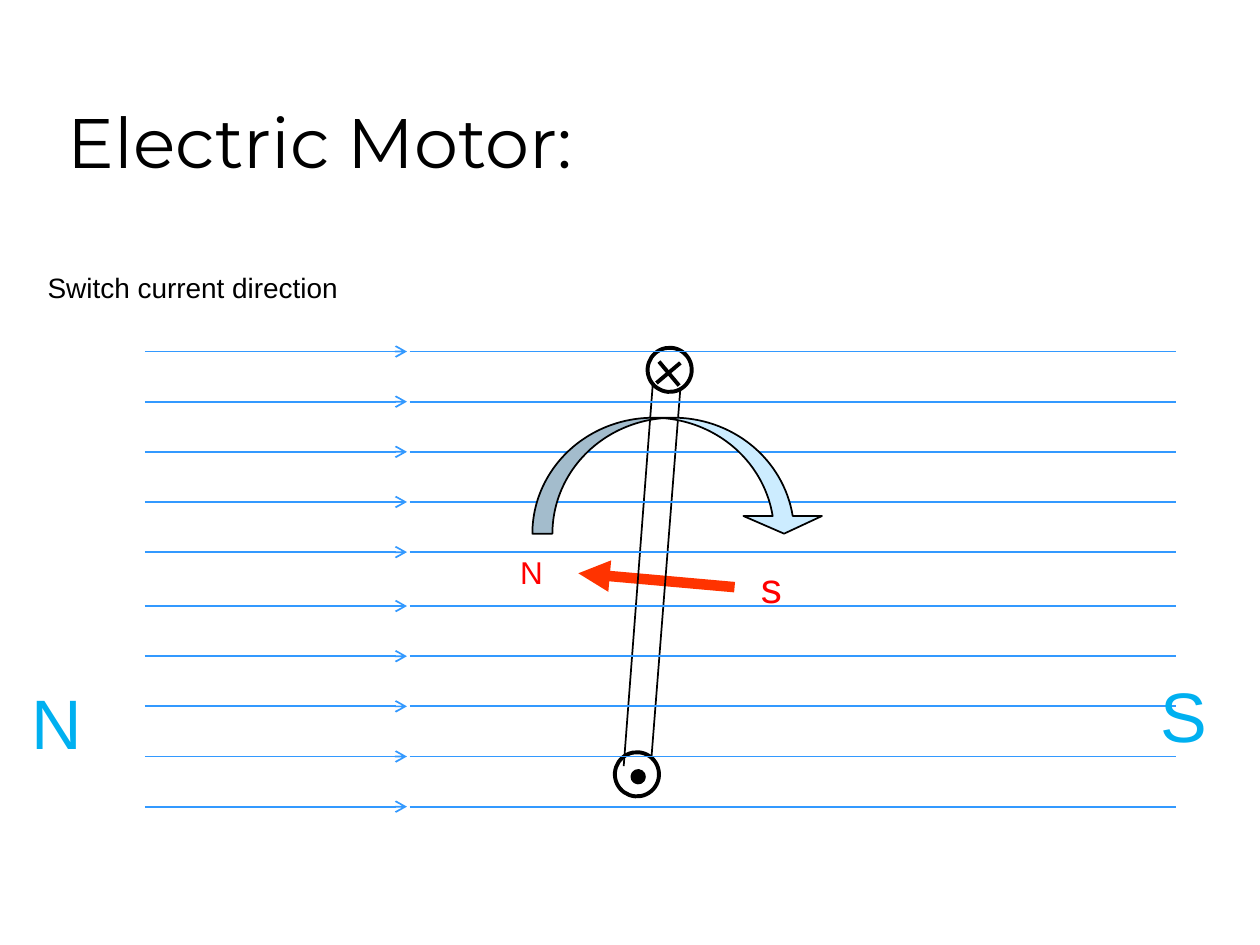
from pptx import Presentation
from pptx.dml.color import RGBColor
from pptx.enum.shapes import MSO_CONNECTOR, MSO_SHAPE
from pptx.enum.text import MSO_ANCHOR
from pptx.oxml.ns import qn
from pptx.util import Inches, Pt
from lxml import etree

LINE = MSO_CONNECTOR.STRAIGHT
CIRCLE = MSO_SHAPE.OVAL
CURVED_ARROW = MSO_SHAPE.CURVED_RIGHT_ARROW
TOP, BOTTOM = MSO_ANCHOR.TOP, MSO_ANCHOR.BOTTOM

COLS, ROWS = 100, 75
BLACK, WHITE = "000000", "FFFFFF"
FIELD, POLE, MAGNET = "3399FF", "00B0F0", "FF0000"
TILT = 184.5


def rgb(code):
    return RGBColor.from_string(code)


class Sketch:
    """Draws on one slide; lengths are columns and rows of a 100 by 75 grid."""

    def __init__(self, prs):
        self.slide = prs.slides.add_slide(prs.slide_layouts[6])
        self.shapes = self.slide.shapes
        self.col = prs.slide_width / COLS
        self.row = prs.slide_height / ROWS

    def place(self, x, y, w, h):
        return (round(x * self.col), round(y * self.row),
                round(w * self.col), round(h * self.row))

    def text(self, text, x, y, w, h, size, color=BLACK, font="Arial", anchor=TOP):
        tf = self.shapes.add_textbox(*self.place(x, y, w, h)).text_frame
        tf.word_wrap = True
        tf.vertical_anchor = anchor
        p = tf.paragraphs[0]
        p.text = text
        p.font.name = font
        p.font.size = Pt(size)
        p.font.color.rgb = rgb(color)

    def line(self, x1, y1, x2, y2, color=BLACK, width=1, head=None, tail=None):
        """head and tail are arrowhead types at the start and the end."""
        s = self.shapes.add_connector(LINE, *self.place(x1, y1, x2, y2))
        s.line.color.rgb = rgb(color)
        s.line.width = Pt(width)
        ln = s.line._get_or_add_ln()
        for tag, kind in (("a:headEnd", head), ("a:tailEnd", tail)):
            if kind:
                etree.SubElement(ln, qn(tag), type=kind)
        etree.SubElement(s._element.spPr, qn("a:effectLst"))

    def shape(self, kind, x, y, w, h, fill, width, rotation):
        """Adds a vertically flipped, rotated shape with a black outline."""
        s = self.shapes.add_shape(kind, *self.place(x, y, w, h))
        s.shadow.inherit = False
        s.fill.solid()
        s.fill.fore_color.rgb = rgb(fill)
        s.line.color.rgb = rgb(BLACK)
        s.line.width = Pt(width)
        s.rotation = rotation
        s._element.spPr.find(qn("a:xfrm")).set("flipV", "1")
        return s


def draw_coil(sketch):
    sketch.line(45.9, 45.5, 58.3, 46.6, "FF3300", 6, head="triangle")
    for x, y in ((51.4, 27.6), (48.8, 59.7)):
        sketch.shape(CIRCLE, x, y, 3.5, 3.5, WHITE, 2.25, TILT)
    sketch.line(54, 28.8, 52.1, 30.4, width=2.25)
    sketch.line(52.3, 28.7, 53.9, 30.6, width=2.25)
    sketch.line(54, 30.8, 51.7, 60.2)
    sketch.line(51.8, 30.6, 49.5, 60.8)


def draw_field(sketch):
    for top in (27.9, 48.1):
        for i in range(5):
            y = top + i * 3.98
            sketch.line(11.5, y, 32.3, y, FIELD, tail="arrow")
            sketch.line(32.5, y, 93.3, y, FIELD)


def draw_rotation(sketch):
    sketch.shape(CIRCLE, 50.2, 61.2, 0.9, 0.9, BLACK, 2.25, TILT)
    arrow = sketch.shape(CURVED_ARROW, 49.2, 26.2, 9.2, 23.1, "CCECFF", 1, 90)
    for i, value in enumerate((0.173, 0.678, 0.152)):
        arrow.adjustments[i] = value


def main():
    prs = Presentation()
    prs.slide_width, prs.slide_height = Inches(10), Inches(7.5)
    sketch = Sketch(prs)
    sketch.text("Electric Motor:", 4.4, 2.5, 85, 12.5, 40,
                font="Montserrat", anchor=BOTTOM)
    draw_coil(sketch)
    draw_field(sketch)
    draw_rotation(sketch)
    sketch.text("N", 1.5, 53.4, 10, 7.7, 40, POLE)
    sketch.text("S", 91.1, 52.9, 7.1, 7.7, 40, POLE)
    sketch.text("s", 59.4, 44.1, 10, 5, 24, MAGNET)
    sketch.text("N", 40.3, 43.4, 3.8, 4, 18, MAGNET)
    sketch.text("Switch current direction", 2.8, 21, 34.4, 3.7, 16)
    prs.save("out.pptx")


if __name__ == "__main__":
    main()
